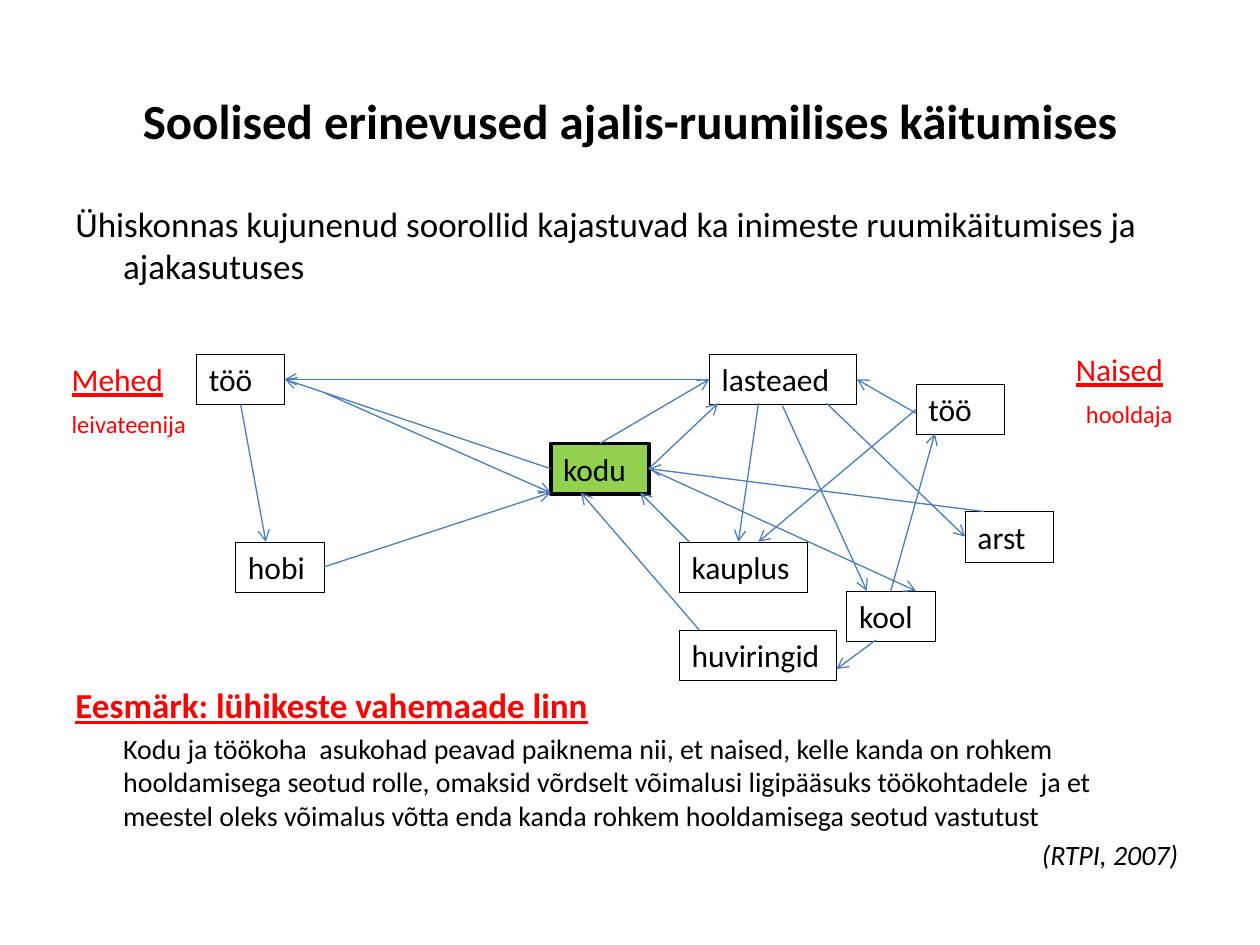
from lxml import etree
from pptx import Presentation
from pptx.dml.color import RGBColor
from pptx.enum import shapes, text
from pptx.oxml import ns
from pptx.util import Inches, Pt

FONT = "Calibri"
BLACK, RED, GREEN, BLUE = "000000", "FF0000", "92D050", "4B7EBC"
BOX_H = 0.4

TITLE = "Soolised erinevused ajalis-ruumilises käitumises"
BODY = [
    dict(text="Ühiskonnas kujunenud soorollid kajastuvad ka inimeste ruumikäitumises ja ajakasutuses",
         size=20, before=0, hang=0.38),
    dict(text="Eesmärk: lühikeste vahemaade linn",
         size=20, before=227, hang=0.38, color=RED, bold=True, underline=True),
    dict(text="Kodu ja töökoha  asukohad peavad paiknema nii, et naised, kelle kanda on rohkem "
              "hooldamisega seotud rolle, omaksid võrdselt võimalusi ligipääsuks töökohtadele  ja et "
              "meestel oleks võimalus võtta enda kanda rohkem hooldamisega seotud vastutust",
         size=16, before=3, hang=0),
    dict(text="(RTPI, 2007) ", size=16, before=3, hang=0.38, italic=True, align=text.PP_ALIGN.RIGHT),
]
PLACES = {
    "kodu": ("kodu", 4.37, 3.52, 0.78),
    "lasteaed": ("lasteaed", 5.63, 2.81, 1.17),
    "naiste töö": ("töö", 7.27, 3.05, 0.7),
    "arst": ("arst", 7.66, 4.06, 0.7),
    "kool": ("kool", 6.72, 4.69, 0.7),
    "kauplus": ("kauplus", 5.39, 4.3, 1.02),
    "meeste töö": ("töö", 1.56, 2.81, 0.7),
    "hobi": ("hobi", 1.87, 4.3, 0.7),
    "huviringid": ("huviringid", 5.39, 5, 1.25),
}
LABELS = [
    ("Mehed", 0.47, 2.81, 1.02, 0.4, 18, True),
    ("Naised", 8.44, 2.73, 1.02, 0.4, 18, True),
    ("leivateenija", 0.47, 3.2, 1.17, 0.34, 14, False),
    ("hooldaja", 8.52, 3.12, 1.02, 0.34, 14, False),
]
TOP, LEFT, BOTTOM, RIGHT = range(4)
TRIPS = [
    (("kodu", RIGHT), (5.7, 3.2)),
    ((6.21, 3.22), (6.88, 4.69)),
    (("kool", TOP), (7.42, 3.44)),
    ((7.27, 3.28), ("lasteaed", RIGHT)),
    ((6.56, 3.2), ("arst", LEFT)),
    ((7.81, 4.06), ("kodu", RIGHT)),
    ((6.02, 3.2), (5.86, 4.3)),
    (("naiste töö", LEFT), (6.02, 4.3)),
    ((5.47, 4.3), (5.08, 3.91)),
    (("kodu", RIGHT), (7.27, 4.69)),
    ((5.55, 5), (4.61, 3.91)),
    (("kodu", LEFT), ("meeste töö", RIGHT)),
    (("meeste töö", BOTTOM), (2.11, 4.3)),
    ((2.58, 3.12), (4.37, 3.91)),
    (("hobi", RIGHT), (4.37, 3.91)),
    (("kodu", TOP), ("lasteaed", LEFT)),
    (("lasteaed", LEFT), ("meeste töö", RIGHT)),
    ((6.95, 5.08), (6.64, 5.31)),
]


def rgb(value):
    return RGBColor.from_string(value)


def style(p, size, color=BLACK, bold=False, italic=False, underline=False,
          align=text.PP_ALIGN.LEFT):
    p.alignment = align
    for r in p.runs:
        f = r.font
        f.name, f.size, f.color.rgb = FONT, Pt(size), rgb(color)
        f.bold, f.italic, f.underline = bold, italic, underline


def add_title(s):
    sp = s.shapes.title
    sp.left, sp.top, sp.width, sp.height = map(Inches, (0.5, 0.55, 9, 0.7))
    tf = sp.text_frame
    tf.text = TITLE
    tf.vertical_anchor = text.MSO_ANCHOR.MIDDLE
    tf.margin_top = Inches(0.15)
    style(tf.paragraphs[0], 28, bold=True, align=text.PP_ALIGN.CENTER)


def add_body(s):
    tf = s.shapes.add_textbox(*map(Inches, (0.5, 1.56, 9, 5.14))).text_frame
    tf.word_wrap = True
    for i, item in enumerate(BODY):
        p = tf.add_paragraph() if i else tf.paragraphs[0]
        look = dict(item)
        p.text = look.pop("text")
        p.space_before = Pt(look.pop("before"))
        pPr = p._p.get_or_add_pPr()
        pPr.set("marL", str(Inches(0.38)))
        pPr.set("indent", str(-Inches(look.pop("hang"))))
        style(p, **look)


def fill_text(sp, words, size, **look):
    tf = sp.text_frame
    tf.text = words
    tf.word_wrap = True
    tf.auto_size = text.MSO_AUTO_SIZE.SHAPE_TO_FIT_TEXT
    tf.vertical_anchor = text.MSO_ANCHOR.TOP
    style(tf.paragraphs[0], size, **look)


def add_place(s, name, words, x, y, w):
    sp = s.shapes.add_shape(shapes.MSO_SHAPE.RECTANGLE, *map(Inches, (x, y, w, BOX_H)))
    sp.shadow.inherit = False
    home = name == "kodu"
    if home:
        sp.fill.solid()
        sp.fill.fore_color.rgb = rgb(GREEN)
    else:
        sp.fill.background()
    sp.line.color.rgb = rgb(BLACK)
    sp.line.width = Pt(2.25 if home else 0.25)
    fill_text(sp, words, 18)
    return sp


def add_trip(s, boxes, start, end):
    points = [(0, 0) if isinstance(e[0], str) else e for e in (start, end)]
    c = s.shapes.add_connector(shapes.MSO_CONNECTOR.STRAIGHT,
                               *(Inches(v) for pt in points for v in pt))
    for e, join in ((start, c.begin_connect), (end, c.end_connect)):
        if isinstance(e[0], str):
            join(boxes[e[0]], e[1])
    c.line.color.rgb = rgb(BLUE)
    c.line.width = Pt(0.75)
    etree.SubElement(c.line._get_or_add_ln(), ns.qn("a:tailEnd"), type="arrow")
    etree.SubElement(c._element.spPr, ns.qn("a:effectLst"))


def main():
    prs = Presentation()
    prs.slide_width, prs.slide_height = Inches(10), Inches(7.5)
    s = prs.slides.add_slide(prs.slide_layouts[5])
    add_title(s)
    add_body(s)
    boxes = {name: add_place(s, name, *place) for name, place in PLACES.items()}
    for start, end in TRIPS:
        add_trip(s, boxes, start, end)
    for words, x, y, w, h, size, underline in LABELS:
        sp = s.shapes.add_textbox(*map(Inches, (x, y, w, h)))
        fill_text(sp, words, size, color=RED, underline=underline)
    prs.save("out.pptx")


if __name__ == "__main__":
    main()
